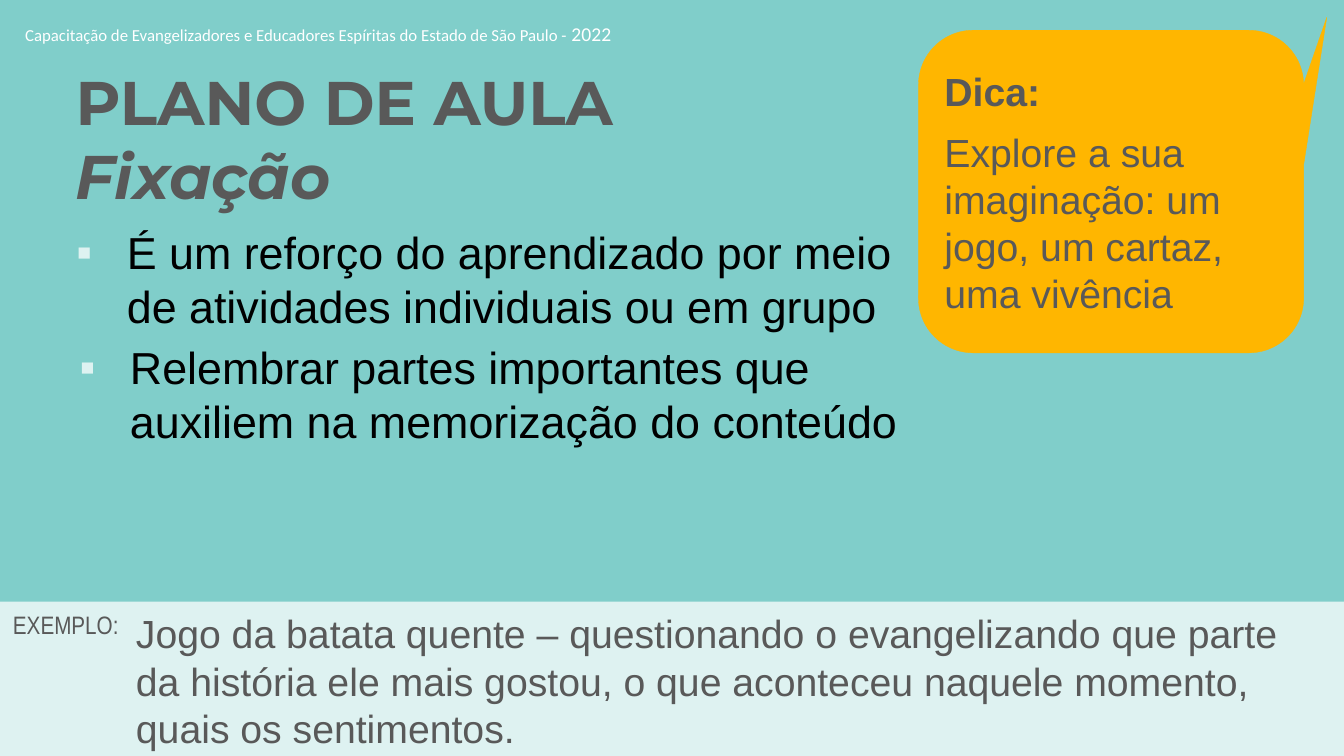
from lxml import etree
from pptx import Presentation
from pptx import util as u
from pptx.dml.color import RGBColor
from pptx.enum import shapes, text
from pptx.oxml import ns

TEAL = RGBColor(0x80, 0xCE, 0xCA)
PALE = RGBColor(0xDE, 0xF2, 0xF1)
AMBER = RGBColor(0xFF, 0xB6, 0x00)
GREY = RGBColor(0x59, 0x59, 0x59)
BLACK = RGBColor(0x00, 0x00, 0x00)
WHITE = RGBColor(0xFF, 0xFF, 0xFF)


def add_span(para, words, *, size, font="Arial", color=GREY, bold=False, italic=False):
    span = para.add_run()
    span.text = words
    span.font.name = font
    span.font.size = u.Pt(size)
    span.font.color.rgb = color
    span.font.bold = bold
    span.font.italic = italic


class LessonSlide:
    def __init__(self, deck):
        self.width = deck.slide_width
        self.height = deck.slide_height
        self.page = deck.slides.add_slide(deck.slide_layouts[6])
        fill = self.page.background.fill
        fill.solid()
        fill.fore_color.rgb = TEAL

    def place(self, left, top, width, height):
        return (
            round(self.width * left / 100),
            round(self.height * top / 100),
            round(self.width * width / 100),
            round(self.height * height / 100),
        )

    def text_box(self, area, paragraphs, anchor=text.MSO_ANCHOR.TOP, wrap=True):
        box = self.page.shapes.add_textbox(*self.place(*area))
        box.text_frame.word_wrap = wrap
        box.text_frame.vertical_anchor = anchor
        self.fill_text(box.text_frame, paragraphs)
        return box

    def fill_text(self, frame, paragraphs, gap=0):
        for index, spans in enumerate(paragraphs):
            para = frame.add_paragraph() if index else frame.paragraphs[0]
            para.alignment = text.PP_ALIGN.LEFT
            if index and gap:
                para.space_before = u.Pt(gap)
            for words, style in spans:
                add_span(para, words, **style)

    def bullet(self, area, words):
        box = self.text_box(area, [[(words, dict(size=32, color=BLACK))]])
        para = box.text_frame.paragraphs[0]
        para.space_after = u.Pt(10)
        properties = para._p.get_or_add_pPr()
        properties.set("marL", str(u.Inches(0.5)))
        properties.set("indent", str(-u.Inches(0.5)))
        color = etree.SubElement(properties, ns.qn("a:buClr"))
        etree.SubElement(color, ns.qn("a:srgbClr"), val=str(PALE))
        etree.SubElement(properties, ns.qn("a:buFont"), typeface="Arial")
        etree.SubElement(properties, ns.qn("a:buChar"), char="▪")

    def shape(self, kind, area, color):
        shape = self.page.shapes.add_shape(kind, *self.place(*area))
        shape.shadow.inherit = False
        shape.fill.solid()
        shape.fill.fore_color.rgb = color
        shape.line.fill.background()
        return shape

    def callout(self, area, paragraphs):
        kind = shapes.MSO_SHAPE.ROUNDED_RECTANGULAR_CALLOUT
        shape = self.shape(kind, area, AMBER)
        for index, value in enumerate((0.56, -0.54, 0.17)):
            shape.adjustments[index] = value
        shape.line.color.rgb = AMBER
        shape.line.width = u.Pt(0.25)
        shape.text_frame.word_wrap = True
        shape.text_frame.vertical_anchor = text.MSO_ANCHOR.MIDDLE
        self.fill_text(shape.text_frame, paragraphs, gap=10)


def main():
    deck = Presentation()
    deck.slide_width = u.Inches(13.33)
    deck.slide_height = u.Inches(7.5)
    slide = LessonSlide(deck)

    credit = dict(font="Calibri", color=WHITE)
    course = "Capacitação de Evangelizadores e Educadores Espíritas do Estado de São Paulo - "
    slide.text_box(
        (1.13, 2.27, 51.24, 4.53),
        [[(course, dict(size=12, **credit)), ("2022", dict(size=14, **credit))]],
    )

    slide.shape(shapes.MSO_SHAPE.RECTANGLE, (0, 79.6, 100, 20.4), PALE)
    slide.bullet(
        (4.95, 29.07, 63.39, 15.73),
        "É um reforço do aprendizado por meio de atividades individuais ou em grupo",
    )
    slide.text_box(
        (0.23, 80, 9.45, 5.33),
        [[("EXEMPLO:", dict(size=18, font="Arial Narrow"))]],
        wrap=False,
    )
    example = (
        "Jogo da batata quente – questionando o evangelizando que parte da história "
        "ele mais gostou, o que aconteceu naquele momento, quais os sentimentos."
    )
    slide.text_box((9.38, 80, 88.67, 20.13), [[(example, dict(size=28))]])

    tip = "Explore a sua imaginação: um jogo, um cartaz, uma vivência"
    slide.callout(
        (68.34, 4, 28.66, 42.67),
        [[("Dica:", dict(size=28, bold=True))], [(tip, dict(size=28))]],
    )

    heading = dict(size=44, font="Montserrat", bold=True)
    slide.text_box(
        (4.88, 5.2, 52.96, 26),
        [[("PLANO DE AULA", heading)], [("Fixação", dict(heading, italic=True))]],
        anchor=text.MSO_ANCHOR.MIDDLE,
    )
    slide.bullet(
        (5.18, 44.27, 65.94, 15.73),
        "Relembrar partes importantes que auxiliem na memorização do conteúdo",
    )
    deck.save("out.pptx")


if __name__ == "__main__":
    main()
